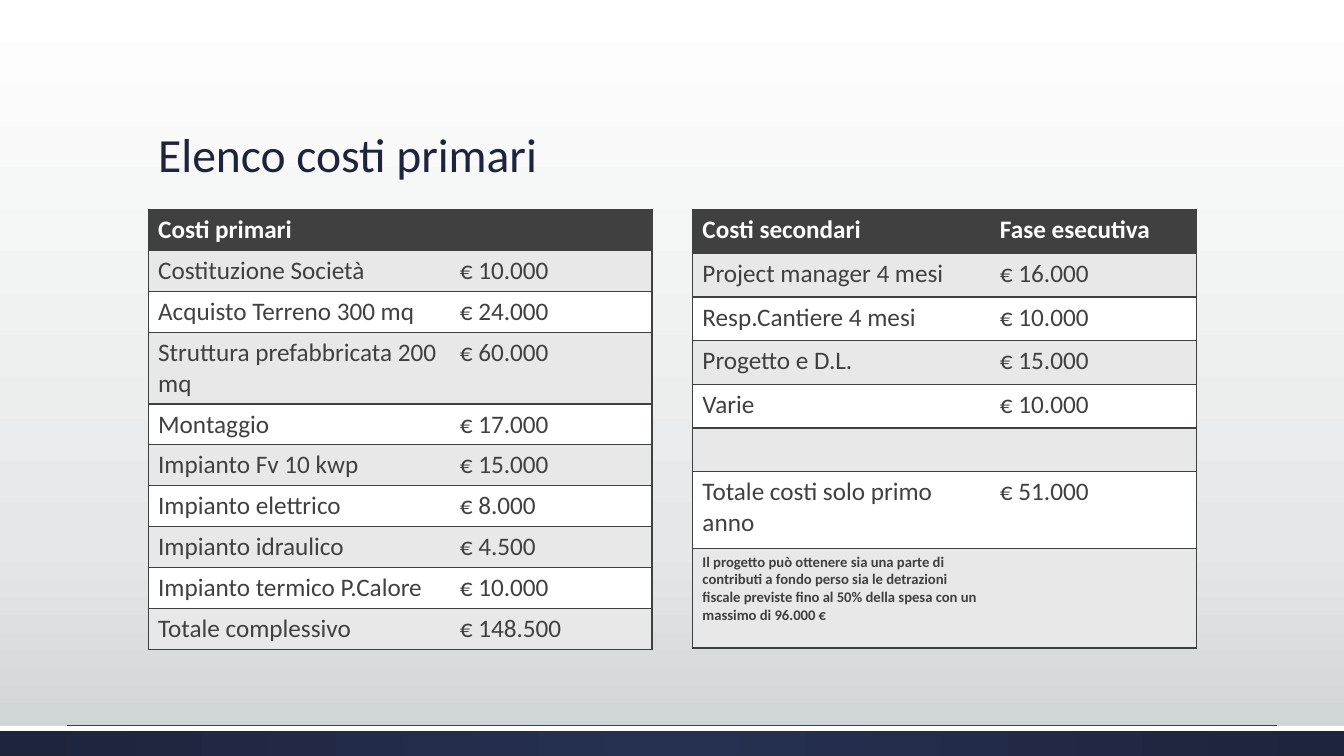
from pptx import Presentation
from pptx.dml.color import RGBColor
from pptx.enum.shapes import MSO_CONNECTOR as Connector, MSO_SHAPE as Shape
from pptx.enum.text import MSO_ANCHOR as Anchor, MSO_AUTO_SIZE as AutoSize, PP_ALIGN as Align
from pptx.oxml import parse_xml
from pptx.oxml.ns import nsdecls, qn
from pptx.util import Pt

TITLE = "Elenco costi primari"
NOTE = ("Il progetto può ottenere sia una parte di contributi a fondo perso sia le "
        "detrazioni fiscale previste fino al 50% della spesa con un massimo di 96.000 €")
PRIMARY_COSTS = [
    ("Costi primari", ""),
    ("Costituzione Società", "€ 10.000"),
    ("Acquisto Terreno 300 mq", "€ 24.000"),
    ("Struttura prefabbricata 200 mq", "€ 60.000"),
    ("Montaggio", "€ 17.000"),
    ("Impianto Fv 10 kwp", "€ 15.000"),
    ("Impianto elettrico", "€ 8.000"),
    ("Impianto idraulico", "€ 4.500"),
    ("Impianto termico P.Calore", "€ 10.000"),
    ("Totale complessivo", "€ 148.500"),
]
SECONDARY_COSTS = [
    ("Costi secondari", "Fase esecutiva"),
    ("Project manager 4 mesi", "€ 16.000"),
    ("Resp.Cantiere 4 mesi", "€ 10.000"),
    ("Progetto e D.L.", "€ 15.000"),
    ("Varie", "€ 10.000"),
    ("", ""),
    ("Totale costi solo primo anno", "€ 51.000"),
    (NOTE, ""),
]
# rows, left edge, column widths, usual row height, heights of taller rows
TABLES = [
    (PRIMARY_COSTS, 105.8, (215.5, 144.5), 29.2, {3: 51.1}),
    (SECONDARY_COSTS, 494.6, (212.5, 147.5), 31.2, {6: 54.7, 7: 71.3}),
]
COLORS = {"navy": "1D243C", "blue": "263050", "dark": "404040",
          "band": "E8E8E8", "white": "FFFFFF", "mist": "E5E8E8", "grey": "CDD2D2"}
FONT = "Calibri"
WIDTH, HEIGHT = 960, 540
FOOTER_TOP, TABLE_TOP = 518.4, 149.8


def color(name):
    return RGBColor.from_string(COLORS[name])


def set_font(font, **values):
    font.name = FONT
    font.color.rgb = color(values.pop("color"))
    for name, value in values.items():
        setattr(font, name, value)


def set_gradient(fill, element, stops, direction):
    fill.gradient()
    old = next(element.iter(qn("a:gradFill")))
    stops_xml = "".join(
        f'<a:gs pos="{percent * 1000}"><a:srgbClr val="{COLORS[name]}"/></a:gs>'
        for percent, name in stops)
    new = parse_xml(f'<a:gradFill {nsdecls("a")} rotWithShape="1">'
                    f'<a:gsLst>{stops_xml}</a:gsLst>{direction}</a:gradFill>')
    old.getparent().replace(old, new)


def set_borders(cell, column):
    """Frame the row: no line between its two columns."""
    inner = "lnR" if column == 0 else "lnL"
    properties = cell._tc.get_or_add_tcPr()
    for index, side in enumerate(("lnL", "lnR", "lnT", "lnB")):
        paint = ("<a:noFill/>" if side == inner else
                 f'<a:solidFill><a:srgbClr val="{COLORS["dark"]}"/></a:solidFill>')
        properties.insert(index, parse_xml(
            f'<a:{side} {nsdecls("a")} w="{Pt(1)}">{paint}</a:{side}>'))


def add_bar(page, height):
    bar = page.shapes.add_shape(Shape.RECTANGLE, 0, Pt(FOOTER_TOP), Pt(WIDTH), Pt(height))
    bar.shadow.inherit = False
    bar.line.fill.background()
    return bar


def add_footer(page):
    base = add_bar(page, HEIGHT - FOOTER_TOP)
    set_gradient(base.fill, base._element, [(0, "blue"), (100, "navy")],
                 '<a:path path="circle"><a:fillToRect l="50000" t="50000" '
                 'r="50000" b="50000"/></a:path>')
    strip = add_bar(page, 3.6)
    strip.fill.solid()
    strip.fill.fore_color.rgb = color("white")
    rule = page.shapes.add_connector(Connector.STRAIGHT, Pt(48), Pt(518), Pt(912), Pt(518))
    rule.line.color.rgb = color("dark")
    rule.line.width = Pt(0.75)
    rule._element.spPr.append(parse_xml(f'<a:effectLst {nsdecls("a")}/>'))


def add_title(page):
    title = page.shapes.title
    for name, value in {"left": 105.8, "top": 36.7, "width": 748.8, "height": 97.2}.items():
        setattr(title, name, Pt(value))
    frame = title.text_frame
    frame.text = TITLE
    for name, value in {"vertical_anchor": Anchor.BOTTOM, "word_wrap": True,
                        "auto_size": AutoSize.NONE}.items():
        setattr(frame, name, value)
    para = frame.paragraphs[0]
    para.alignment, para.line_spacing = Align.LEFT, 0.9
    set_font(para.runs[0].font, size=Pt(34), color="navy")


def add_cost_table(page, rows, left, widths, row_height, tall_rows):
    heights = [tall_rows.get(index, row_height) for index in range(len(rows))]
    table = page.shapes.add_table(len(rows), len(widths), Pt(left), Pt(TABLE_TOP),
                                  Pt(sum(widths)), Pt(sum(heights))).table
    for column, width in zip(table.columns, widths):
        column.width = Pt(width)
    for index, (texts, height) in enumerate(zip(rows, heights)):
        table.rows[index].height = Pt(height)
        header = index == 0
        fill = "dark" if header else "band" if index % 2 else "white"
        for column, text in enumerate(texts):
            cell = table.cell(index, column)
            cell.fill.solid()
            cell.fill.fore_color.rgb = color(fill)
            set_borders(cell, column)
            if text:
                cell.text = text
                note = text == NOTE
                set_font(cell.text_frame.paragraphs[0].runs[0].font,
                         size=Pt(10.5 if note else 18), bold=header or note,
                         color="white" if header else "dark")


def main():
    deck = Presentation()
    deck.slide_width, deck.slide_height = Pt(WIDTH), Pt(HEIGHT)
    page = deck.slides.add_slide(deck.slide_layouts[5])
    set_gradient(page.background.fill, page.element,
                 [(0, "white"), (72, "mist"), (100, "grey")],
                 '<a:lin ang="5400000" scaled="0"/>')
    add_footer(page)
    add_title(page)
    for table in TABLES:
        add_cost_table(page, *table)
    deck.save("out.pptx")


if __name__ == "__main__":
    main()
